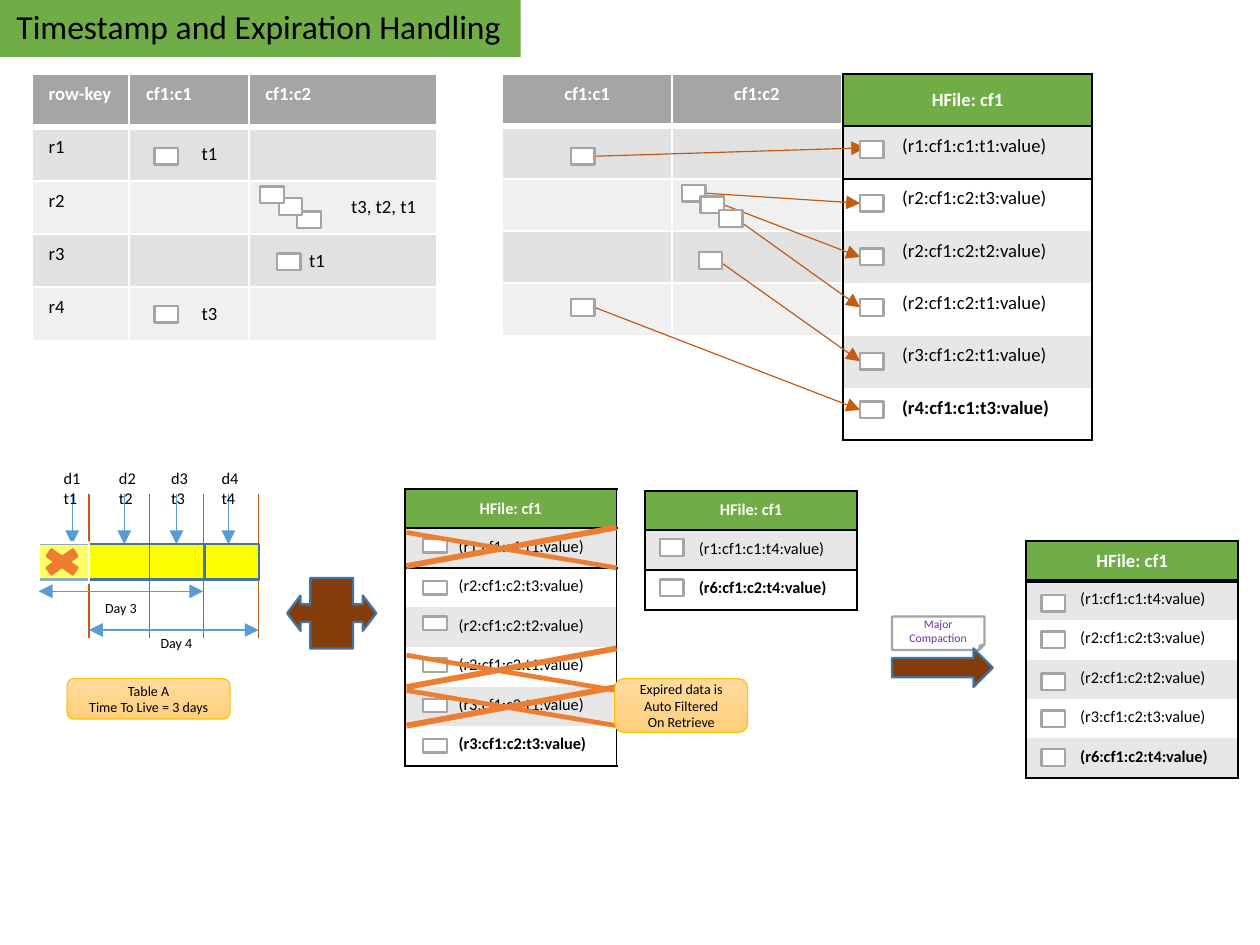
from dataclasses import dataclass
from typing import Optional

from lxml import etree
from pptx import Presentation
from pptx import util as u
from pptx.dml.color import RGBColor
from pptx.enum import shapes, text
from pptx.oxml.ns import qn

# The slide is 4:3, on a grid of 750 columns by 562.5 rows
SLIDE_W = u.Inches(7.5)
SLIDE_H = SLIDE_W * 3 // 4
CELL = SLIDE_W // 750
FONT = "Calibri"
BLACK, WHITE, GREEN, GREY = "000000", "FFFFFF", "70AD47", "A5A5A5"
YELLOW, BLUE, NAVY, RUST = "FFFF00", "5B9BD5", "43739E", "C55A11"
ORANGE, BROWN, GOLD = "ED7D31", "843C0B", "FFC000"
KIND = shapes.MSO_SHAPE
LEFT, CENTER = text.PP_ALIGN.LEFT, text.PP_ALIGN.CENTER
TOP, MIDDLE = text.MSO_ANCHOR.TOP, text.MSO_ANCHOR.MIDDLE


@dataclass
class Block:
    x: float
    y: float
    w: float = 14
    h: float = 10
    kind: int = KIND.RECTANGLE
    fill: str = WHITE
    line: Optional[str] = GREY
    weight: float = 1


@dataclass
class Stroke:
    x1: float
    y1: float
    x2: float
    y2: float
    color: str = RUST
    weight: float = 0.5
    head: bool = False
    tail: bool = False


@dataclass
class HFile:
    x: float
    y: float
    w: float
    h: float
    rows: list[str]
    indent: int = 32
    size: float = 7
    head_size: float = 7
    head_rule: float = 1
    first_rule: bool = True


def g(n: float) -> int:
    return u.Emu(round(n * CELL))


def rgb(color: str) -> RGBColor:
    return RGBColor.from_string(color)


def write(tf, lines: list[str], size: float, color: str = BLACK, bold: bool = False,
          align=LEFT, indent: float = 0) -> None:
    for i, line in enumerate(lines):
        p = tf.add_paragraph() if i else tf.paragraphs[0]
        p.alignment = align
        if indent:
            p._p.get_or_add_pPr().set("marL", str(g(indent)))
        if line:
            r = p.add_run()
            r.text = line
            r.font.name, r.font.size, r.font.bold = FONT, u.Pt(size), bold
            r.font.color.rgb = rgb(color)
        else:
            etree.SubElement(p._p, qn("a:endParaRPr"), sz=str(int(size * 100)))


def draw_block(b: Block):
    sp = s.shapes.add_shape(b.kind, g(b.x), g(b.y), g(b.w), g(b.h))
    sp.shadow.inherit = False
    sp.fill.solid()
    sp.fill.fore_color.rgb = rgb(b.fill)
    if b.line:
        sp.line.color.rgb = rgb(b.line)
        sp.line.width = u.Pt(b.weight)
    else:
        sp.line.fill.background()
    return sp


def draw_stroke(k: Stroke):
    cx = s.shapes.add_connector(shapes.MSO_CONNECTOR.STRAIGHT, g(k.x1), g(k.y1), g(k.x2), g(k.y2))
    cx.line.color.rgb = rgb(k.color)
    cx.line.width = u.Pt(k.weight)
    ln = cx.line._get_or_add_ln()
    for tag, shown in (("a:headEnd", k.head), ("a:tailEnd", k.tail)):
        if shown:
            etree.SubElement(ln, qn(tag), type="triangle")
    etree.SubElement(cx._element.spPr, qn("a:effectLst"))
    return cx


def label(x: float, y: float, w: float, h: float, lines: list[str], size: float, align=LEFT) -> None:
    tf = s.shapes.add_textbox(g(x), g(y), g(w), g(h)).text_frame
    tf.word_wrap = True
    write(tf, lines, size, align=align)


def callout(x: float, y: float, w: float, h: float, lines: list[str]) -> None:
    sp = draw_block(Block(x, y, w, h, KIND.ROUNDED_RECTANGLE, GOLD, GOLD, 0.5))
    sp.fill.gradient()
    sp.fill.gradient_angle = 270
    for stop, color in zip(sp.fill.gradient_stops, ("FFDB9E", "FFD07C")):
        stop.color.rgb = rgb(color)
    sp.text_frame.vertical_anchor = MIDDLE
    write(sp.text_frame, lines, 6, align=CENTER)


def make_table(x: float, y: float, widths: list[float], h: float, n: int):
    t = s.shapes.add_table(n, len(widths), g(x), g(y), g(sum(widths)), g(h)).table
    t.first_row = t.horz_banding = False
    for column, w in zip(t.columns, widths):
        column.width = g(w)
    for row in t.rows:
        row.height = g(h / n)
    return t


def style_cell(cell, fill: str, color: str, sides: dict[str, float]) -> None:
    """Sides maps L, R, T, B to a line width; a side left out has no line."""
    tc_pr = cell._tc.get_or_add_tcPr()
    for side in "LRTB":
        ln = etree.SubElement(tc_pr, qn(f"a:ln{side}"), w=str(u.Pt(sides.get(side, 0))))
        if side in sides:
            solid = etree.SubElement(ln, qn("a:solidFill"))
            etree.SubElement(solid, qn("a:srgbClr"), val=color)
        else:
            etree.SubElement(ln, qn("a:noFill"))
    cell.fill.solid()
    cell.fill.fore_color.rgb = rgb(fill)


def draw_grid(x: float, y: float, widths: list[float], h: float, rows: list[list[str]], align,
              indents: dict[tuple[int, int], float]) -> None:
    t = make_table(x, y, widths, h, len(rows))
    for i, row in enumerate(rows):
        for j, value in enumerate(row):
            cell, head = t.cell(i, j), i == 0
            fill = GREY if head else ("F0F0F0", "E1E1E1")[i % 2]
            style_cell(cell, fill, WHITE, {"L": 1, "R": 1, "T": 3 if i == 1 else 1, "B": 3 if head else 1})
            cell.vertical_anchor = MIDDLE if (i, j) in indents else TOP
            write(cell.text_frame, [value], 8, WHITE if head else BLACK, head, align, indents.get((i, j), 0))


def draw_hfile(f: HFile) -> None:
    n = len(f.rows) + 1
    t = make_table(f.x, f.y, [f.w], f.h, n)
    for i, value in enumerate(["HFile: cf1"] + f.rows):
        cell, head, last = t.cell(i, 0), i == 0, i == n - 1
        sides = {"L": 1, "R": 1}
        if i < 2:
            sides["T"] = f.head_rule if i else 1
        if i == 2 and f.first_rule:
            sides["T"] = 1
        if head or last or (i == 1 and f.first_rule):
            sides["B"] = f.head_rule if head else 1
        style_cell(cell, GREEN if head else (WHITE, "E7E7E7")[i % 2], BLACK, sides)
        if head:
            cell.vertical_anchor = MIDDLE
            write(cell.text_frame, [value], f.head_size, WHITE, True, CENTER)
        else:
            write(cell.text_frame, [value], f.size, bold=last, indent=f.indent - 10)


prs = Presentation()
prs.slide_width, prs.slide_height = SLIDE_W, SLIDE_H
s = prs.slides.add_slide(prs.slide_layouts[6])

# Title
banner = draw_block(Block(0, 0, 310, 34, fill=GREEN, line=None))
banner.text_frame.word_wrap = False
banner.text_frame.vertical_anchor = MIDDLE
write(banner.text_frame, ["Timestamp and Expiration Handling"], 14.4)
banner.text_frame.paragraphs[0].line_spacing = 0.9

# Logical tables
draw_grid(19, 44, [58, 71, 112], 159,
          [["row-key", "cf1:c1", "cf1:c2"], ["r1", "t1", ""], ["r2", "", "t3, t2, t1"],
           ["r3", "", "t1"], ["r4", "t3", ""]],
          LEFT, {(1, 1): 33, (2, 2): 51, (3, 2): 26, (4, 1): 33})
draw_grid(299, 44, [101, 101], 156, [["cf1:c1", "cf1:c2"]] + [["", ""]] * 4, CENTER, {})

# Stored files
for hfile in (
    HFile(502, 44, 148, 218, ["(r1:cf1:c1:t1:value)", "(r2:cf1:c2:t3:value)", "(r2:cf1:c2:t2:value)",
                              "(r2:cf1:c2:t1:value)", "(r3:cf1:c2:t1:value)", "(r4:cf1:c1:t3:value)"],
          indent=35, size=8, head_size=8),
    HFile(241, 291, 126, 165, ["(r1:cf1:c1:t1:value)", "(r2:cf1:c2:t3:value)", "(r2:cf1:c2:t2:value)",
                               "(r2:cf1:c2:t1:value)", "(r3:cf1:c2:t1:value)", "(r3:cf1:c2:t3:value)"]),
    HFile(384, 292, 126, 71, ["(r1:cf1:c1:t4:value)", "(r6:cf1:c2:t4:value)"]),
    HFile(611, 322, 126, 141, ["(r1:cf1:c1:t4:value)", "(r2:cf1:c2:t3:value)", "(r2:cf1:c2:t2:value)",
                               "(r3:cf1:c2:t3:value)", "(r6:cf1:c2:t4:value)"],
          head_size=8, head_rule=2, first_rule=False),
):
    draw_hfile(hfile)

# Arrows from table cells to file rows, each with its source and target box if joined
links = [
    (Stroke(354, 92, 515, 88, tail=True), 0, None),
    (Stroke(420, 113, 512, 121, tail=True), 2, 1),
    (Stroke(438, 130, 512, 182, tail=True), None, 3),
    (Stroke(426, 154, 512, 215, tail=True), None, 4),
    (Stroke(354, 183, 512, 244, tail=True), 1, 5),
    (Stroke(431, 122, 512, 153, tail=True), 3, 2),
]
arrows = [draw_stroke(k) for k, _, _ in links]
sources = [draw_block(Block(x, y)) for x, y in
           ((340, 88), (340, 178), (406, 110), (417, 117), (428, 125), (416, 150))]
targets = [draw_block(Block(512, y)) for y in (84, 116, 148, 178, 210, 239)]
for arrow, (_, source, target) in zip(arrows, links):
    if source is not None:
        arrow.begin_connect(sources[source], 3)
    if target is not None:
        arrow.end_connect(targets[target], 1)

# Value boxes in the first table and the lower files
for x, y in ((92, 88), (177, 126), (165, 151), (92, 182), (166, 118), (155, 111), (393, 321), (393, 345),
             (620, 354), (620, 376), (620, 401), (620, 423), (620, 446)):
    draw_block(Block(x, y))
for y in (321, 346, 367, 392, 416, 440):
    draw_block(Block(252, y, h=8))

# Timeline
for x in (43, 74, 105, 136):
    draw_stroke(Stroke(x, 294, x, 324, BLUE, tail=True))
draw_block(Block(23, 324, 99, 21, fill=YELLOW, line=NAVY))
for day, x in enumerate((28, 61, 92, 122), 1):
    label(x, 274, 31, 34, [f"d{day}", f"t{day}"], 7)
for x in (53, 89, 121, 154):
    draw_stroke(Stroke(x, 294, x, 380))
for name, x1, x2, y, label_x, label_y in (("Day 3", 23, 121, 352, 36, 352), ("Day 4", 53, 154, 375, 69, 373)):
    draw_stroke(Stroke(x1, y, x2, y, BLUE, head=True, tail=True))
    label(label_x, label_y, 72, 20, [name], 6, CENTER)
draw_block(Block(122, 324, 32, 21, fill=YELLOW, line=NAVY))
veil = draw_block(Block(23, 323, 30, 24, line=WHITE))
veil_color = veil.fill._xPr.find(qn("a:solidFill"))[0]
etree.SubElement(veil_color, qn("a:alpha"), val="40000")
draw_block(Block(22, 324, 30, 21, KIND.MATH_MULTIPLY, ORANGE, ORANGE))

# Crosses over expired rows
for falling, rising in ((317, 314), (390, 386), (411, 409)):
    draw_stroke(Stroke(242, rising + 23, 367, rising, ORANGE, 2.5))
    draw_stroke(Stroke(242, falling, 367, falling + 21, ORANGE, 2))

# Block arrows and notes
both_ways = draw_block(Block(171, 344, 53, 42, KIND.LEFT_RIGHT_ARROW_CALLOUT, BROWN, NAVY))
for i, value in enumerate((0.25, 0.25, 0.19, 0.48)):
    both_ways.adjustments[i] = value
note = draw_block(Block(531, 367, 55, 20, KIND.FOLDED_CORNER)).text_frame
note.margin_left = note.margin_right = g(5)
note.vertical_anchor = MIDDLE
write(note, ["Major Compaction"], 5, "7030A0", align=CENTER)
draw_block(Block(531, 386, 60, 23, KIND.RIGHT_ARROW, BROWN, NAVY))
callout(40, 404, 97, 24, ["Table A", "Time To Live = 3 days"])
callout(366, 404, 79, 32, ["Expired data is Auto Filtered", "On Retrieve"])

prs.save("out.pptx")
